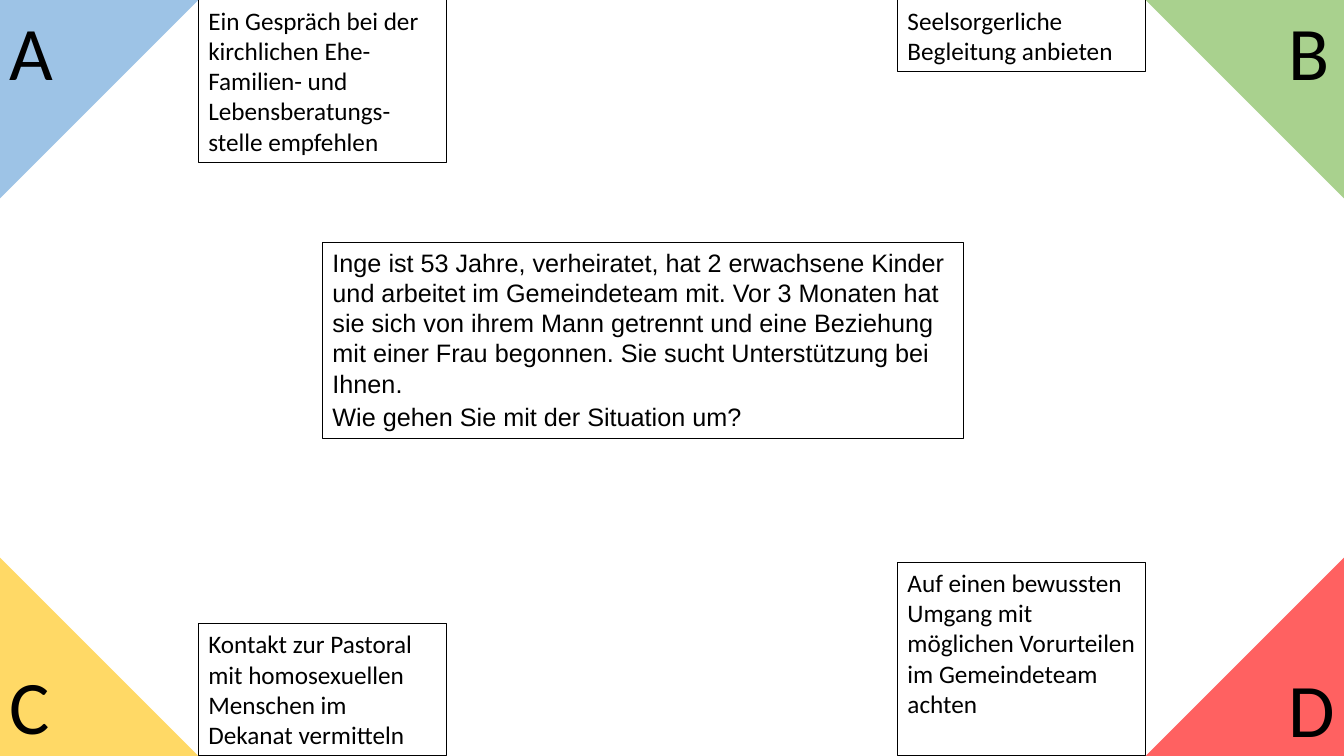
from pptx import Presentation
from pptx.dml.color import RGBColor
from pptx.enum.shapes import MSO_SHAPE
from pptx.enum.text import MSO_ANCHOR, PP_ALIGN
from pptx.util import Cm, Pt

TRIANGLE = MSO_SHAPE.ISOSCELES_TRIANGLE
RECTANGLE = MSO_SHAPE.RECTANGLE
TOP = MSO_ANCHOR.TOP
LEFT = PP_ALIGN.LEFT

BLACK = RGBColor(0x00, 0x00, 0x00)
BLUE = RGBColor(0x9D, 0xC3, 0xE6)
GREEN = RGBColor(0xA9, 0xD1, 0x8E)
YELLOW = RGBColor(0xFF, 0xD9, 0x66)
RED = RGBColor(0xFF, 0x61, 0x61)

# Lengths in centimetres
WIDTH, HEIGHT = 33.87, 19.05
CORNER = 5
ANSWER_WIDTH = 6.25
LETTER_HEIGHT = 2.57
RIGHT_LETTER_LEFT = 32.23

presentation = Presentation()
presentation.slide_width = Cm(WIDTH)
presentation.slide_height = Cm(HEIGHT)
slide = presentation.slides.add_slide(presentation.slide_layouts[6])


def write(shape, paragraphs, font_name, size, space_after=0):
    frame = shape.text_frame
    frame.vertical_anchor = TOP
    frame.text = "\n".join(paragraphs)
    for paragraph in frame.paragraphs:
        paragraph.alignment = LEFT
        paragraph.space_after = Pt(space_after)
        paragraph.font.name = font_name
        paragraph.font.size = Pt(size)
        paragraph.font.color.rgb = BLACK


def add_box(left, top, width, height):
    box = slide.shapes.add_shape(RECTANGLE, Cm(left), Cm(top), Cm(width), Cm(height))
    box.shadow.inherit = False
    box.fill.background()
    box.line.color.rgb = BLACK
    box.line.width = Pt(0.75)
    box.text_frame.word_wrap = True
    return box


# Corners: letter, colour, rotation, at right, at bottom,
# letter top, letter width, answer height, answer
corners = [
    ("A", BLUE, 90, False, False, 0, 1.63, 4.1,
     "Ein Gespräch bei der kirchlichen Ehe-Familien- und Lebensberatungs-stelle empfehlen"),
    ("B", GREEN, 180, True, False, 0, 1.55, 1.8,
     "Seelsorgerliche Begleitung anbieten"),
    ("C", YELLOW, 0, False, True, 16.48, 1.55, 3.33,
     "Kontakt zur Pastoral mit homosexuellen Menschen im Dekanat vermitteln"),
    ("D", RED, 270, True, True, 16.56, 1.7, 4.88,
     "Auf einen bewussten Umgang mit möglichen Vorurteilen im Gemeindeteam achten"),
]

for (letter, color, rotation, at_right, at_bottom,
     letter_top, letter_width, answer_height, answer) in corners:
    # Coloured triangle
    triangle = slide.shapes.add_shape(
        TRIANGLE,
        Cm(WIDTH - CORNER if at_right else 0),
        Cm(HEIGHT - CORNER if at_bottom else 0),
        Cm(CORNER), Cm(CORNER))
    triangle.adjustments[0] = 0
    triangle.rotation = rotation
    triangle.shadow.inherit = False
    triangle.fill.solid()
    triangle.fill.fore_color.rgb = color
    triangle.line.fill.background()

    # Letter
    letter_box = slide.shapes.add_textbox(
        Cm(RIGHT_LETTER_LEFT if at_right else 0), Cm(letter_top),
        Cm(letter_width), Cm(LETTER_HEIGHT))
    letter_box.text_frame.word_wrap = False
    write(letter_box, [letter], "Calibri", 54)

    # Answer beside the triangle
    answer_box = add_box(
        WIDTH - CORNER - ANSWER_WIDTH if at_right else CORNER,
        HEIGHT - answer_height if at_bottom else 0,
        ANSWER_WIDTH, answer_height)
    write(answer_box, [answer], "Calibri", 18)

# Situation in the middle
situation = [
    "Inge ist 53 Jahre, verheiratet, hat 2 erwachsene Kinder und arbeitet im "
    "Gemeindeteam mit. Vor 3 Monaten hat sie sich von ihrem Mann getrennt und "
    "eine Beziehung mit einer Frau begonnen. Sie sucht Unterstützung bei Ihnen.",
    "Wie gehen Sie mit der Situation um?",
]
write(add_box(8.13, 6.1, 16.15, 4.95), situation, "Arial", 18, space_after=2)

presentation.save("out.pptx")
